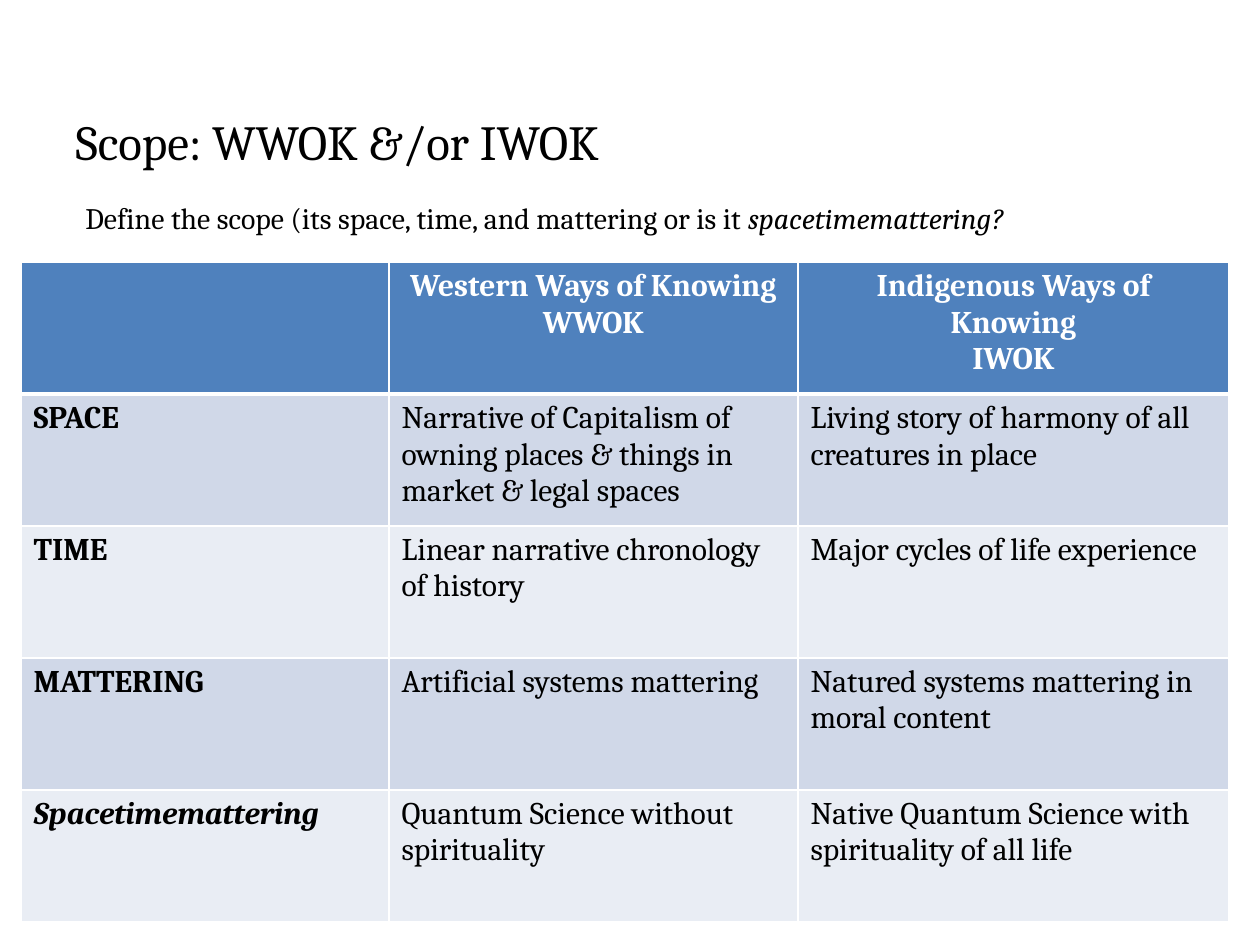
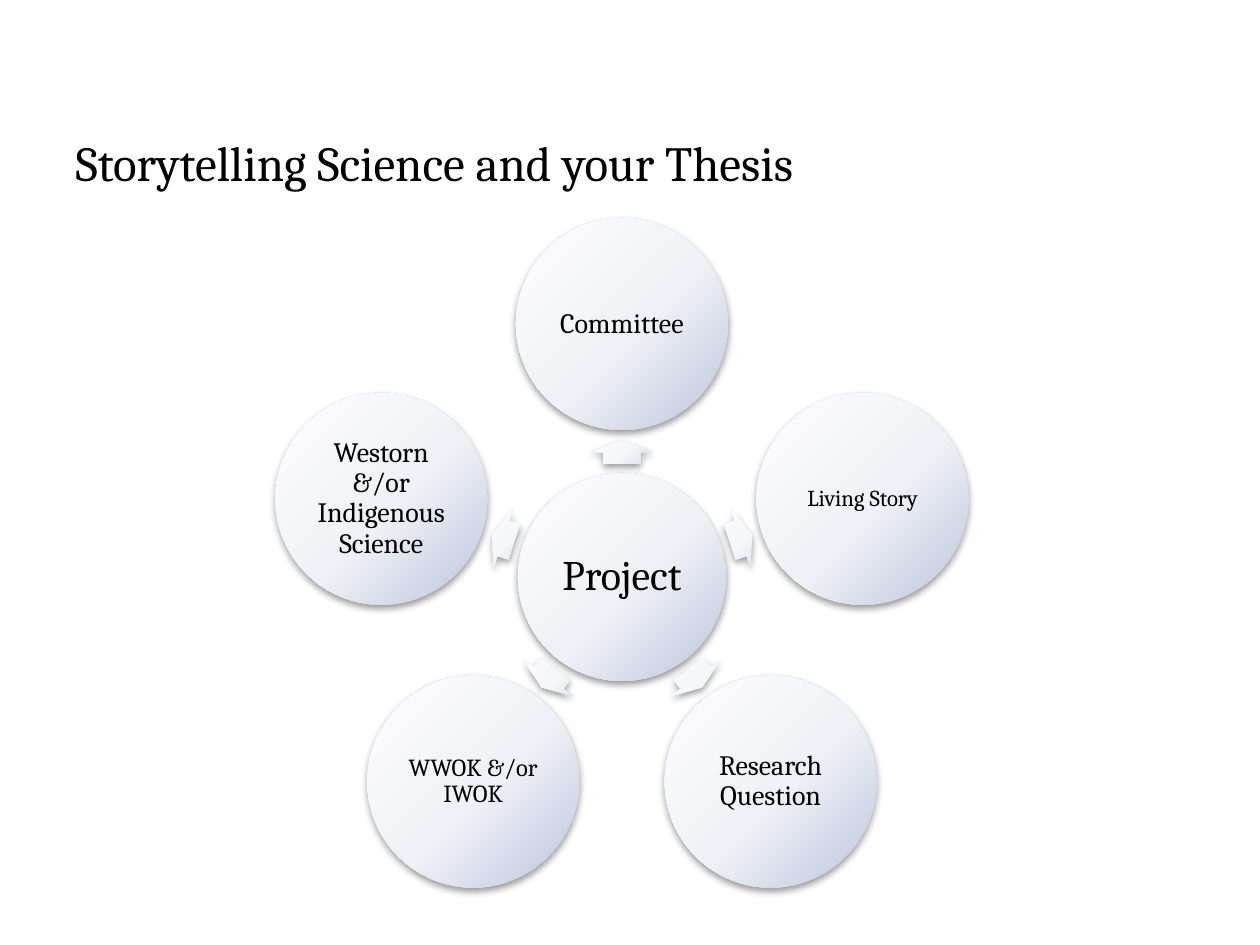
from math import cos, radians, sin

from pptx import Presentation
from pptx.dml.color import RGBColor
from pptx.enum.shapes import MSO_SHAPE
from pptx.enum.text import MSO_ANCHOR, MSO_AUTO_SIZE, PP_ALIGN
from pptx.oxml import parse_xml
from pptx.oxml.ns import nsdecls, qn
from pptx.util import Emu, Pt

COLORS = {
    "ink": "000000",
    "paper": "FFFFFF",
    "head": "4F81BD",
    "odd": "D0D8E8",
    "even": "E9EDF4",
}
DISC = ((0, "FEFEFE"), (55, "EFF1F6"), (100, "BCC4DB"))
ARROW = ((0, "FEFEFF"), (55, "F6F7FA"), (100, "DADEEA"))

TABLE = (
    ((), ("Western Ways of Knowing", "WWOK"), ("Indigenous Ways of Knowing", "IWOK")),
    (
        ("SPACE",),
        ("Narrative of Capitalism of owning places & things in market & legal spaces",),
        ("Living story of harmony of all creatures in place",),
    ),
    (
        ("TIME",),
        ("Linear narrative chronology of history",),
        ("Major cycles of life experience",),
    ),
    (
        ("MATTERING",),
        ("Artificial systems mattering",),
        ("Natured systems mattering in moral content",),
    ),
    (
        (("", "Spacetimemattering"),),
        ("Quantum Science without spirituality",),
        ("Native Quantum Science with spirituality of all life",),
    ),
)
PARTS = (
    ("Committee", 16, 3),
    ("Living Story", 13, 0),
    ("Research Question", 16, 3),
    ("WWOK &/or IWOK", 14, 3),
    ("Westorn &/or Indigenous Science", 16, 3),
)


def px(n):
    """Turn px into EMU."""
    return Emu(round(n * 914400 / 126))


def write(frame, *paras, size=18, color="ink", bold=False, align=PP_ALIGN.LEFT, line=None):
    """Fill a frame; in a tuple of runs every second run is italic."""
    for i, runs in enumerate(paras):
        para = frame.paragraphs[0] if i == 0 else frame.add_paragraph()
        para.alignment = align
        para.line_spacing = line
        for j, words in enumerate((runs,) if isinstance(runs, str) else runs):
            if not words:
                continue
            run = para.add_run()
            run.text = words
            font = run.font
            font.name, font.size = "Cambria", Pt(size)
            font.bold, font.italic = bold, j % 2 == 1
            font.color.rgb = RGBColor.from_string(COLORS[color])


class Deck:
    """Hold the style and the current slide."""

    def __init__(self):
        """Start a 10 by 7.5 inch deck."""
        self.prs = Presentation()
        self.prs.slide_width, self.prs.slide_height = px(1260), px(945)
        self.slide = None

    def start(self, title, top):
        """Add a slide with its title."""
        self.slide = self.prs.slides.add_slide(self.prs.slide_layouts[5])
        shape = self.slide.shapes.title
        shape.left, shape.top, shape.width, shape.height = map(px, (63, top, 1134, 126))
        frame = shape.text_frame
        frame.auto_size = MSO_AUTO_SIZE.NONE
        frame.vertical_anchor = MSO_ANCHOR.TOP
        write(frame, title, size=28)

    def note(self, box, *paras, **form):
        """Add a wrapped text box."""
        frame = self.slide.shapes.add_textbox(*map(px, box)).text_frame
        frame.word_wrap = True
        write(frame, *paras, **form)

    def table(self, left, top, cols, height, rows):
        """Add a table with a header row and white rules."""
        grid = self.slide.shapes.add_table(
            len(rows), len(cols), px(left), px(top), px(sum(cols)), px(height * len(rows))
        ).table
        for col, width in zip(grid.columns, cols):
            col.width = px(width)
        for r, row in enumerate(rows):
            grid.rows[r].height = px(height)
            for c, paras in enumerate(row):
                self.cell(grid.cell(r, c), r, c, paras)

    def cell(self, cell, r, c, paras):
        """Rule, fill and write one table cell."""
        wide = {"T": r == 1, "B": r == 0}
        props = cell._tc.get_or_add_tcPr()
        for side in "LRTB":
            props.append(parse_xml(
                f'<a:ln{side} {nsdecls("a")} w="{Pt(3 if wide.get(side) else 1)}">'
                f'<a:solidFill><a:srgbClr val="{COLORS["paper"]}"/></a:solidFill></a:ln{side}>'
            ))
        cell.fill.solid()
        fill = "head" if r == 0 else "odd" if r % 2 else "even"
        cell.fill.fore_color.rgb = RGBColor.from_string(COLORS[fill])
        form = {"color": "paper", "align": PP_ALIGN.CENTER} if r == 0 else {}
        write(cell.text_frame, *paras, bold=r == 0 or c == 0, **form)

    def glow(self, kind, x, y, width, height, stops):
        """Add a centred shape with a round gradient and a soft shadow."""
        shape = self.slide.shapes.add_shape(
            kind, *map(px, (x - width / 2, y - height / 2, width, height))
        )
        shape.line.fill.background()
        shape.fill.background()
        shape.shadow.inherit = False
        props = shape._element.spPr
        marks = "".join(
            f'<a:gs pos="{at * 1000}"><a:srgbClr val="{hue}"/></a:gs>' for at, hue in stops
        )
        props.replace(props.find(qn("a:noFill")), parse_xml(
            f'<a:gradFill {nsdecls("a")} rotWithShape="1"><a:gsLst>{marks}</a:gsLst>'
            '<a:path path="circle"><a:fillToRect l="-40000" t="-90000" r="140000" b="190000"/>'
            "</a:path></a:gradFill>"
        ))
        props.find(qn("a:effectLst")).append(parse_xml(
            f'<a:outerShdw {nsdecls("a")} blurRad="{Pt(4.1)}" dist="{Pt(2)}" dir="5400000" '
            f'rotWithShape="0"><a:srgbClr val="{COLORS["ink"]}"><a:alpha val="40000"/>'
            "</a:srgbClr></a:outerShdw>"
        ))
        return shape

    def disc(self, words, x, y, width, size, inset):
        """Add a labelled circle."""
        frame = self.glow(MSO_SHAPE.OVAL, x, y, width, width, DISC).text_frame
        frame.word_wrap = True
        frame.vertical_anchor = MSO_ANCHOR.MIDDLE
        frame.margin_left = frame.margin_right = px(inset)
        frame.margin_top = frame.margin_bottom = px(inset)
        write(frame, words, size=size, align=PP_ALIGN.CENTER, line=0.9)

    def arrow(self, x, y, turn):
        """Add a short block arrow turned outward."""
        shape = self.glow(MSO_SHAPE.RIGHT_ARROW, x, y, 23, 62, ARROW)
        shape.adjustments[0], shape.adjustments[1] = 0.6, 0.5
        shape.rotation = turn % 360

    def wheel(self, hub, parts, x, y):
        """Place parts evenly around a hub, with an arrow to each."""
        self.disc(hub, x, y, 208, 24, 4)
        for i, (words, size, inset) in enumerate(parts):
            turn = 360 * i / len(parts) - 90
            dx, dy = cos(radians(turn)), sin(radians(turn))
            self.arrow(x + 125 * dx, y + 125 * dy, turn)
            self.disc(words, x + 253 * dx, y + 253 * dy, 212, size, inset)


def main():
    """Build both slides and save them."""
    deck = Deck()
    deck.start("Scope: WWOK &/or IWOK", 105)
    scope = "Define the scope (its space, time, and mattering or is it "
    deck.note((73, 179, 1134, 88), (scope, "spacetimemattering?"), size=17, line=1.4)
    deck.table(21, 262, (368, 409, 431), 132, TABLE)

    deck.start("Storytelling Science and your Thesis", 126)
    deck.wheel("Project", PARTS, 622, 577)
    deck.prs.save("out.pptx")


if __name__ == "__main__":
    main()
